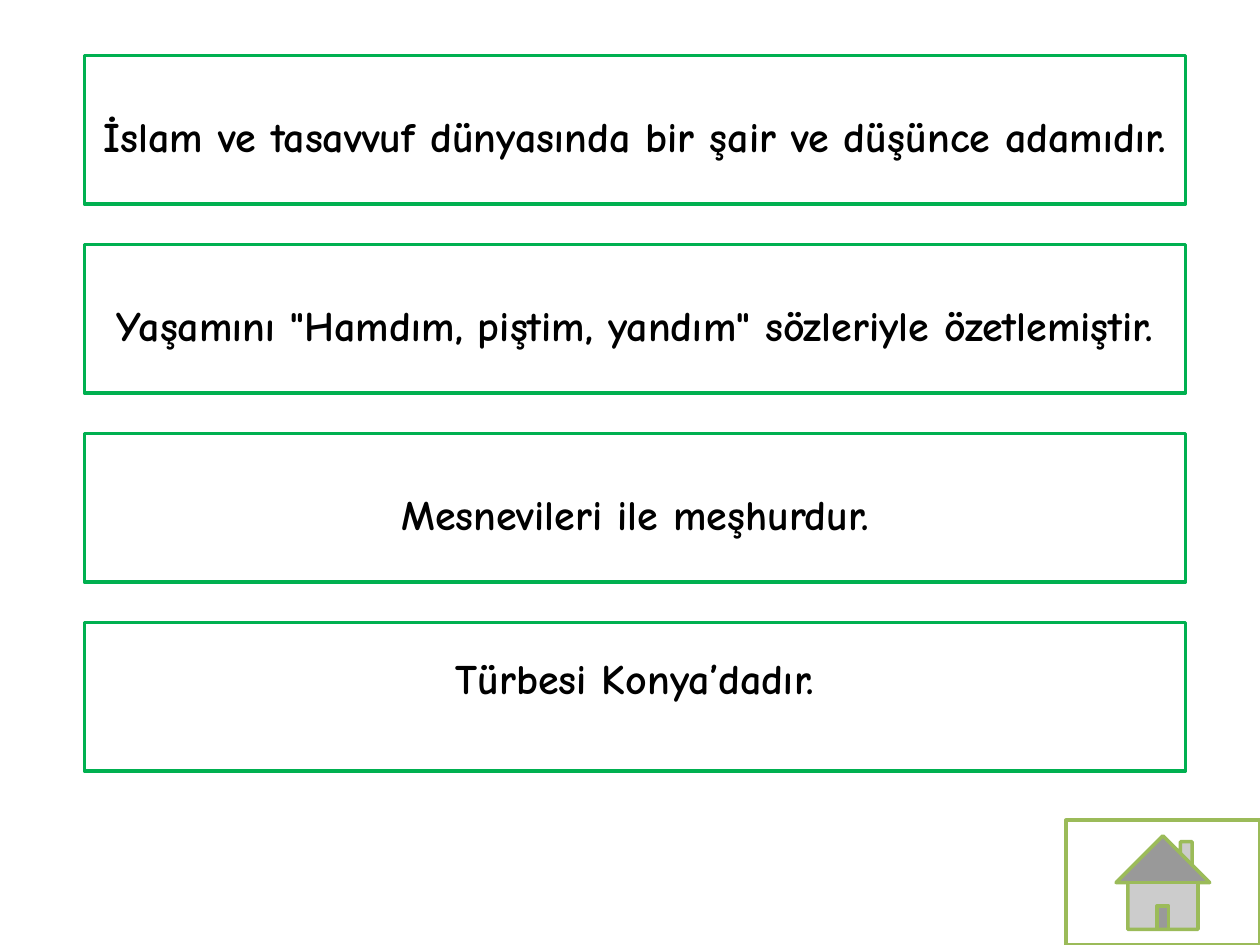
from dataclasses import dataclass

from pptx import Presentation
from pptx.dml.color import RGBColor
from pptx.enum.shapes import MSO_SHAPE as Shape
from pptx.enum.text import MSO_ANCHOR as Anchor, PP_ALIGN as Align
from pptx.util import Inches, Pt


@dataclass(frozen=True)
class Theme:
    """Colours, font and sizes used on the page."""
    paper: RGBColor = RGBColor(0xFF, 0xFF, 0xFF)
    ink: RGBColor = RGBColor(0x00, 0x00, 0x00)
    frame: RGBColor = RGBColor(0x00, 0xB0, 0x50)
    button: RGBColor = RGBColor(0x9B, 0xBB, 0x59)
    font: str = "Comic Neue"
    text_size: Pt = Pt(24)
    line_width: Pt = Pt(2)


def apply(target, formats):
    """Set each named format value on the target."""
    for name, value in formats.items():
        setattr(target, name, value)


class PageBuilder:
    """Draws styled elements on the current page."""

    def __init__(self, page, theme):
        """Keep the page and its theme."""
        self.page = page
        self.theme = theme

    def outlined(self, kind, left, top, width, height, colour):
        """Add a paper-filled shape with a coloured outline."""
        place = [Inches(length) for length in (left, top, width, height)]
        shape = self.page.shapes.add_shape(kind, *place)
        shape.shadow.inherit = False
        shape.fill.solid()
        shape.fill.fore_color.rgb = self.theme.paper
        shape.line.color.rgb = colour
        shape.line.width = self.theme.line_width
        return shape

    def fact_box(self, text, top, inset_top, inset_bottom):
        """Add a framed box holding one centred sentence."""
        box = self.outlined(Shape.RECTANGLE, 0.67, top, 8.74, 1.18, self.theme.frame)
        apply(box.text_frame, {
            "word_wrap": True,
            "vertical_anchor": Anchor.MIDDLE,
            "margin_top": Inches(inset_top),
            "margin_bottom": Inches(inset_bottom),
        })
        para = box.text_frame.paragraphs[0]
        para.alignment = Align.CENTER
        span = para.add_run()
        span.text = text
        apply(span.font, {"name": self.theme.font, "size": self.theme.text_size, "bold": True})
        span.font.color.rgb = self.theme.ink

    def home_button(self):
        """Add the home button in the bottom right corner."""
        self.outlined(Shape.ACTION_BUTTON_HOME, 8.46, 6.51, 1.54, 0.99, self.theme.button)


FACTS = [
    ("İslam ve tasavvuf dünyasında bir şair ve düşünce adamıdır.", 0.15, 0.05),
    ("Yaşamını\u00a0\"Hamdım, piştim, yandım\"\u00a0sözleriyle özetlemiştir.", 0.15, 0.05),
    ("Mesnevileri ile meşhurdur.", 0.15, 0.05),
    ("Türbesi Konya’dadır.", 0.05, 0.35),
]
FIRST_TOP, PITCH = 0.44, 1.5


def main():
    """Build the deck and save it."""
    deck = Presentation()
    apply(deck, {"slide_width": Inches(10), "slide_height": Inches(7.5)})
    builder = PageBuilder(deck.slides.add_slide(deck.slide_layouts[6]), Theme())
    for index, (text, inset_top, inset_bottom) in enumerate(FACTS):
        builder.fact_box(text, FIRST_TOP + index * PITCH, inset_top, inset_bottom)
    builder.home_button()
    deck.save("out.pptx")


if __name__ == "__main__":
    main()
